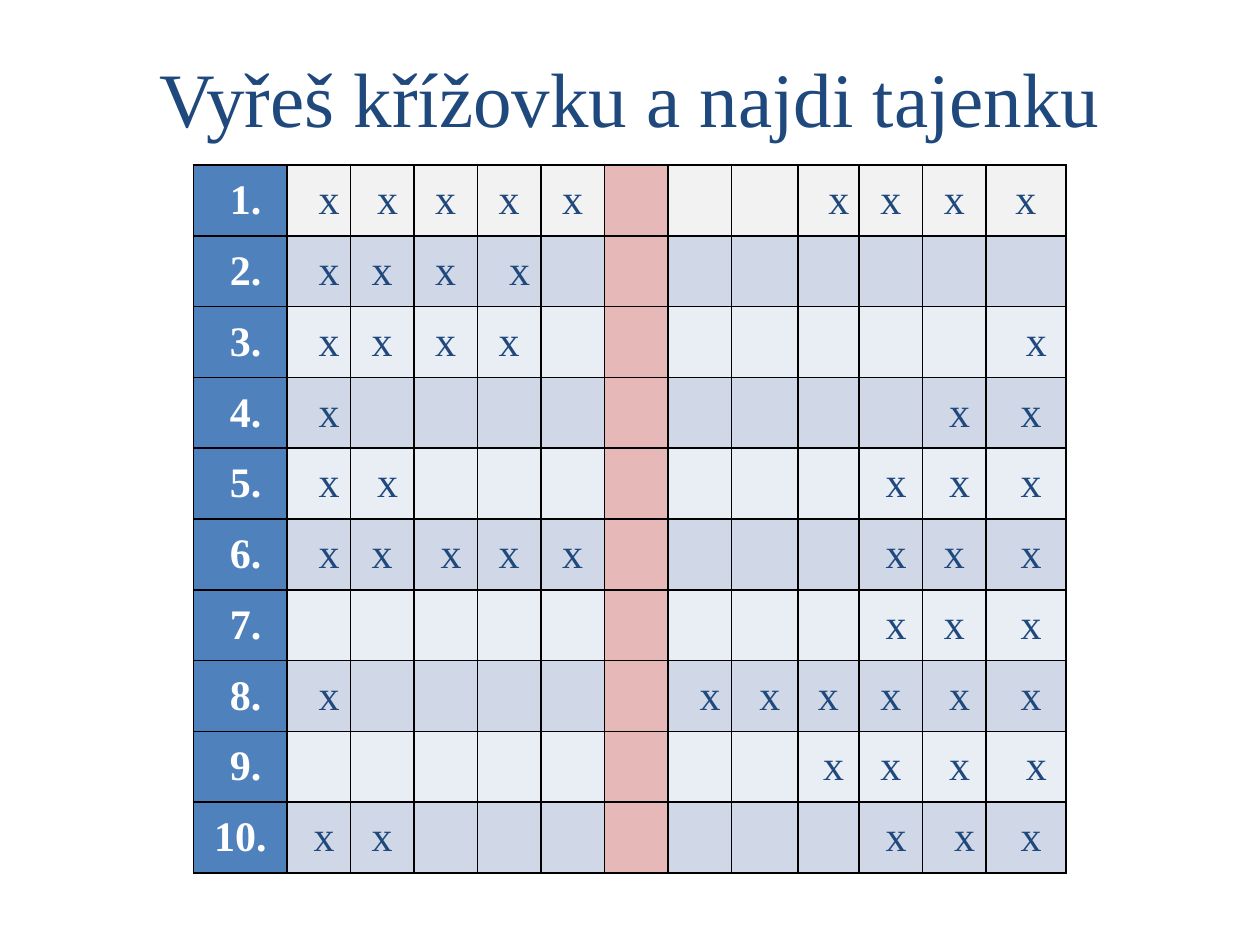
from lxml import etree
from pptx import Presentation
from pptx.dml.color import RGBColor
from pptx.enum import text
from pptx.oxml import ns
from pptx.util import Pt

NAVY = RGBColor(0x1F, 0x49, 0x7D)
BLUE = RGBColor(0x4F, 0x81, 0xBD)
PINK = RGBColor(0xE6, 0xB9, 0xB8)
GREY = RGBColor(0xF2, 0xF2, 0xF2)
PALE = RGBColor(0xE9, 0xED, 0xF4)
BAND = RGBColor(0xD0, 0xD8, 0xE8)
WHITE = RGBColor(0xFF, 0xFF, 0xFF)
FONT = "Times New Roman"

TITLE = "Vyřeš křížovku a najdi tajenku"
# One string a row: "." is a square to fill in, a digit is an "x"
# standing that many steps right of the middle of its square.
ROWS = [
    "21000...2000",
    "2002........",
    "2000.......2",
    "2.........11",
    "21.......111",
    "20100....101",
    ".........101",
    "2.....210011",
    "........1012",
    "10.......121",
]
SECRET_COLUMN = 6
LEFT, TOP = 110.6, 94.3
WIDTHS = [53.4] + [36.3] * 7 + [38, 34.9, 36.3, 36.3, 45.7]
ROW_HEIGHT = 40.46
MARGIN, STEP = 5, 3


def style(para, size, color, bold=False):
    para.alignment = text.PP_ALIGN.CENTER
    for span in para.runs:
        span.font.name = FONT
        span.font.size = Pt(size)
        span.font.bold = bold
        span.font.color.rgb = color


def add_borders(cell):
    properties = cell._tc.get_or_add_tcPr()
    for side in ("a:lnL", "a:lnR", "a:lnT", "a:lnB"):
        line = etree.SubElement(properties, ns.qn(side), w=str(Pt(1)))
        fill = etree.SubElement(line, ns.qn("a:solidFill"))
        etree.SubElement(fill, ns.qn("a:srgbClr"), val="000000")


def fill_cell(cell, label, steps, fill, color, bold):
    """Write a label moved right of the cell's middle by a number of steps."""
    add_borders(cell)
    cell.fill.solid()
    cell.fill.fore_color.rgb = fill
    cell.vertical_anchor = text.MSO_ANCHOR.MIDDLE
    cell.margin_left = Pt(MARGIN + 2 * STEP * steps)
    cell.margin_right = Pt(MARGIN)
    cell.margin_top = cell.margin_bottom = 0
    if label:
        cell.text_frame.text = label
        style(cell.text_frame.paragraphs[0], 24, color, bold)


deck = Presentation()
deck.slide_width, deck.slide_height = Pt(720), Pt(540)
page = deck.slides.add_slide(deck.slide_layouts[6])

box = page.shapes.add_textbox(Pt(36), Pt(21.6), Pt(648), Pt(67))
box.text_frame.word_wrap = True
box.text_frame.vertical_anchor = text.MSO_ANCHOR.MIDDLE
box.text_frame.text = TITLE
style(box.text_frame.paragraphs[0], 44, NAVY)

crossword = page.shapes.add_table(
    len(ROWS), len(WIDTHS), Pt(LEFT), Pt(TOP),
    Pt(sum(WIDTHS)), Pt(ROW_HEIGHT * len(ROWS))).table
for column, width in zip(crossword.columns, WIDTHS):
    column.width = Pt(width)

for r, marks in enumerate(ROWS):
    crossword.rows[r].height = Pt(ROW_HEIGHT)
    number = f"{r + 1}."
    fill_cell(crossword.cell(r, 0), number, int(len(number) == 2),
              BLUE, WHITE, True)
    row_fill = GREY if r == 0 else BAND if r % 2 else PALE
    for c, mark in enumerate(marks, start=1):
        fill = PINK if c == SECRET_COLUMN else row_fill
        label, steps = ("", 0) if mark == "." else ("x", int(mark))
        fill_cell(crossword.cell(r, c), label, steps, fill, NAVY, False)

deck.save("out.pptx")
